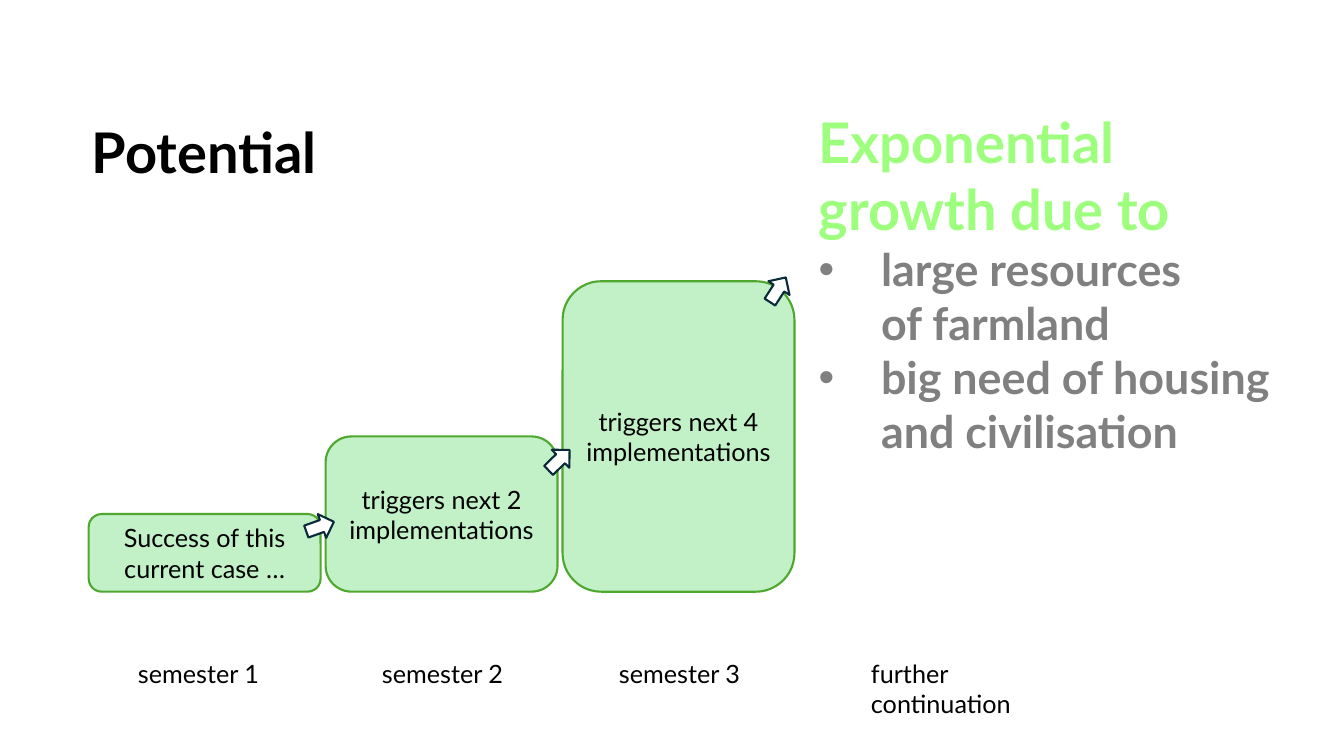
from dataclasses import dataclass

from lxml.etree import SubElement
from pptx import Presentation
from pptx.dml.color import RGBColor
from pptx.enum.shapes import MSO_SHAPE
from pptx.enum.text import MSO_ANCHOR, MSO_AUTO_SIZE, PP_ALIGN
from pptx.oxml.ns import qn
from pptx.shapes.autoshape import Shape
from pptx.slide import Slide
from pptx.text.text import _Paragraph
from pptx.util import Inches, Pt

FONT = "Lato"
BLACK = RGBColor(0x00, 0x00, 0x00)
WHITE = RGBColor(0xFF, 0xFF, 0xFF)
GREY = RGBColor(0x80, 0x80, 0x80)
LIME = RGBColor(0x9E, 0xFF, 0x7E)
MINT = RGBColor(0xC2, 0xF1, 0xC8)
GREEN = RGBColor(0x4E, 0xA7, 0x2E)
NAVY = RGBColor(0x09, 0x2A, 0x39)

# Grid in inches: one column per semester, one row per unit of growth
GRID_LEFT, COLUMN = 0.88, 2.35
BASELINE, ROW = 5.87, 0.77
BAR_WIDTH = 2.3
LABEL_TOP, LABEL_HEIGHT = 6.48, 0.4
BULLET_INDENT = Inches(0.62)


@dataclass(frozen=True)
class Stage:
    """A bar, with its arrow placed relative to the bar's top left corner."""
    text: str
    arrow_dx: float
    arrow_dy: float
    arrow_angle: float


@dataclass(frozen=True)
class Label:
    text: str
    dx: float
    width: float = 1.41
    wrap: bool = False


STAGES = [
    Stage("Success of this current case …", 2.15, 0, 340.5),
    Stage("triggers next 2\vimplementations", 2.17, 0.11, 315.8),
    Stage("triggers next 4\vimplementations", 1.99, -0.04, 302.9),
]
LABELS = [
    Label("semester 1", 0.39),
    Label("semester 2", 0.46),
    Label("semester 3", 0.46),
    Label("further continuation", 0.61, 2.37, True),
]
REASONS = ["large resources\vof farmland", "big need of housing\vand civilisation"]


def column_left(index: int) -> float:
    return GRID_LEFT + index * COLUMN


def style(p: _Paragraph, size: int, color: RGBColor, bold: bool = False) -> None:
    p.font.name = FONT
    p.font.size = Pt(size)
    p.font.bold = bold
    p.font.color.rgb = color


def add_bullet(p: _Paragraph) -> None:
    props = p._p.get_or_add_pPr()
    props.set("marL", str(BULLET_INDENT))
    props.set("indent", str(-BULLET_INDENT))
    SubElement(props, qn("a:buFont"), typeface="Arial")
    SubElement(props, qn("a:buChar"), char="•")


def add_figure(slide: Slide, kind: MSO_SHAPE, left: float, top: float,
               width: float, height: float, fill: RGBColor, line: RGBColor) -> Shape:
    sp = slide.shapes.add_shape(kind, Inches(left), Inches(top), Inches(width), Inches(height))
    sp.shadow.inherit = False
    sp.fill.solid()
    sp.fill.fore_color.rgb = fill
    sp.line.color.rgb = line
    sp.line.width = Pt(1.5)
    return sp


def add_title(slide: Slide) -> None:
    title = slide.shapes.title
    title.left, title.top = Inches(0.81), Inches(1.12)
    title.width, title.height = Inches(2.51), Inches(0.77)
    tf = title.text_frame
    tf.text = "Potential"
    tf.word_wrap = False
    tf.auto_size = MSO_AUTO_SIZE.NONE
    tf.vertical_anchor = MSO_ANCHOR.TOP
    p = tf.paragraphs[0]
    p.alignment = PP_ALIGN.LEFT
    style(p, 40, BLACK, bold=True)


def add_bar(slide: Slide, index: int, stage: Stage) -> None:
    height = ROW * 2 ** index
    bar = add_figure(slide, MSO_SHAPE.ROUNDED_RECTANGLE, column_left(index),
                     BASELINE - height, BAR_WIDTH, height, MINT, GREEN)
    tf = bar.text_frame
    tf.text = stage.text
    tf.word_wrap = True
    tf.vertical_anchor = MSO_ANCHOR.MIDDLE
    p = tf.paragraphs[0]
    p.alignment = PP_ALIGN.CENTER
    style(p, 18, BLACK)


def add_arrow(slide: Slide, index: int, stage: Stage) -> None:
    bar_top = BASELINE - ROW * 2 ** index
    arrow = add_figure(slide, MSO_SHAPE.RIGHT_ARROW, column_left(index) + stage.arrow_dx,
                       bar_top + stage.arrow_dy, 0.29, 0.25, WHITE, NAVY)
    arrow.rotation = stage.arrow_angle


def add_reasons(slide: Slide) -> None:
    box = slide.shapes.add_textbox(Inches(8.02), Inches(1.02), Inches(4.77), Inches(3.6))
    tf = box.text_frame
    tf.word_wrap = False
    tf.text = "Exponential\vgrowth due to"
    style(tf.paragraphs[0], 40, LIME, bold=True)
    for reason in REASONS:
        p = tf.add_paragraph()
        p.text = reason
        add_bullet(p)
        style(p, 32, GREY, bold=True)


def add_label(slide: Slide, index: int, label: Label) -> None:
    box = slide.shapes.add_textbox(Inches(column_left(index) + label.dx), Inches(LABEL_TOP),
                                   Inches(label.width), Inches(LABEL_HEIGHT))
    tf = box.text_frame
    tf.text = label.text
    tf.word_wrap = label.wrap
    style(tf.paragraphs[0], 18, BLACK)


def main() -> None:
    prs = Presentation()
    prs.slide_width, prs.slide_height = Inches(13.33), Inches(7.5)
    slide = prs.slides.add_slide(prs.slide_layouts.get_by_name("Title Only"))
    add_title(slide)
    for index, stage in enumerate(STAGES):
        add_bar(slide, index, stage)
    for index, stage in enumerate(STAGES):
        add_arrow(slide, index, stage)
    add_reasons(slide)
    for index, label in enumerate(LABELS):
        add_label(slide, index, label)
    prs.save("out.pptx")


if __name__ == "__main__":
    main()
